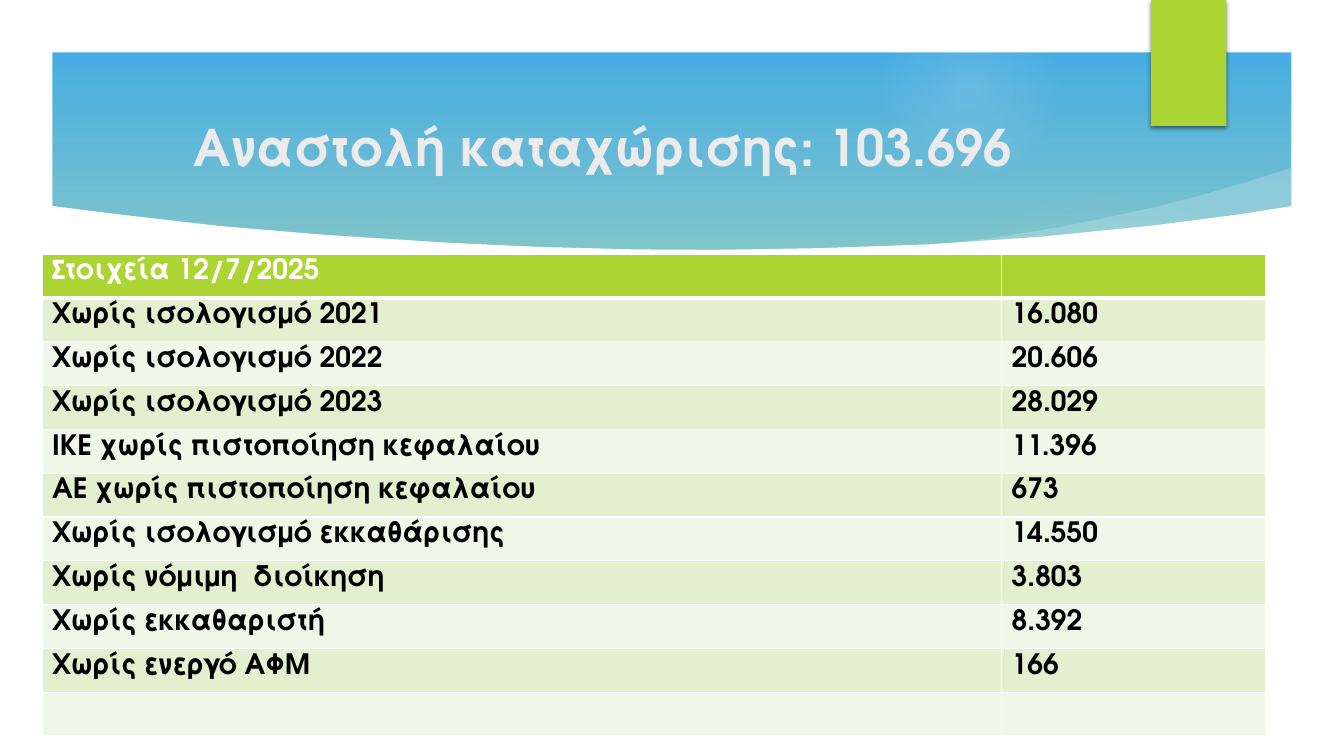
"""Build the slide on suspended registrations: a curved banner above a two-column table."""
import pptx
import pptx.dml.color
import pptx.enum.shapes
import pptx.enum.text
import pptx.oxml
import pptx.oxml.ns
import pptx.util

UNIT = pptx.util.Inches(1 / 12)
COLUMNS, ROWS = 160, 90
FONT = "TeX Gyre Adventor"
COLORS = {
    "sky": "38A6E9", "lime": "DAECA3", "pale": "E6F2C2", "glow": "F7F7F7",
    "white": "FFFFFF", "ribbon": "ACD433", "title": "EBEBEB", "black": "000000",
    "odd": "E3EFCE", "even": "F1F7E8",
}
BACKGROUND_STOPS = [(0, "sky", 100), (74, "lime", 100), (83, "lime", 100), (100, "pale", 100)]
LINEAR = '<a:lin ang="5400000" scaled="0"/>'
RADIAL = '<a:path path="circle"><a:fillToRect l="50000" t="50000" r="50000" b="50000"/></a:path>'
GLOWS = [
    ((113, 22, 37, 37), [(0, "glow", 7), (36, "glow", 6), (69, "glow", 0)]),
    ((105, 0, 21, 21), [(0, "glow", 14), (36, "glow", 7), (73, "glow", 0)]),
]
SWOOSH = [
    (154, 19.9), (148.3, 21.7), (142.8, 23.3), (137.3, 24.7), (131.8, 25.9), (126.4, 27),
    (121.2, 27.85), (116.3, 28.55), (111.6, 29.15), (112, 30), (121, 29.7), (154.7, 25.7),
]
PAGE = [
    (6, 84), (6, 24.5), (13.5, 25.45), (26, 26.9), (38.5, 27.95), (53.3, 28.9),
    (64.2, 29.4), (75.8, 29.7), (85, 29.75), (97.6, 29.55), (110.5, 29.1),
    (123.8, 28.2), (137.3, 26.85), (147.4, 25.55), (154, 24.5), (154, 84),
]
OUTER_EDGE = [(0, 0), (0, ROWS), (COLUMNS, ROWS), (COLUMNS, 0)]
INNER_EDGE = [(153.75, 83.75), (6.25, 83.75), (6.25, 6.25), (153.75, 6.25)]
COLUMN_WIDTHS = (114.25, 31.45)
ROW_HEIGHT = 5.22
ENTRIES = [
    ("Στοιχεία 12/7/2025", ""),
    ("Χωρίς ισολογισμό 2021", "16.080"),
    ("Χωρίς ισολογισμό 2022", "20.606"),
    ("Χωρίς ισολογισμό 2023", "28.029"),
    ("ΙΚΕ χωρίς πιστοποίηση κεφαλαίου", "11.396"),
    ("ΑΕ χωρίς πιστοποίηση κεφαλαίου", "673"),
    ("Χωρίς ισολογισμό εκκαθάρισης", "14.550"),
    ("Χωρίς νόμιμη  διοίκηση", "3.803"),
    ("Χωρίς εκκαθαριστή", "8.392"),
    ("Χωρίς ενεργό ΑΦΜ", "166"),
    ("", ""),
]


def grid(*lengths):
    return [round(length * UNIT) for length in lengths]


def rgb(color):
    return pptx.dml.color.RGBColor.from_string(COLORS[color])


def xml(tag, attributes, content):
    namespace = pptx.oxml.ns.nsdecls("a")
    return pptx.oxml.parse_xml(f"<a:{tag} {namespace} {attributes}>{content}</a:{tag}>")


def color_xml(color, opacity=100):
    return f'<a:srgbClr val="{COLORS[color]}"><a:alpha val="{opacity * 1000}"/></a:srgbClr>'


def set_gradient(fill, owner, stops, direction):
    fill.gradient()
    plain = owner.find(".//" + pptx.oxml.ns.qn("a:gradFill"))
    marks = "".join(
        f'<a:gs pos="{position * 1000}">{color_xml(color, opacity)}</a:gs>'
        for position, color, opacity in stops
    )
    content = f"<a:gsLst>{marks}</a:gsLst>{direction}"
    plain.getparent().replace(plain, xml("gradFill", 'rotWithShape="1"', content))


def set_solid(shape, color, opacity=100):
    shape.shadow.inherit = False
    shape.line.fill.background()
    shape.fill.solid()
    shape.fill.fore_color.rgb = rgb(color)
    if opacity < 100:
        tint = shape._element.spPr.find(".//" + pptx.oxml.ns.qn("a:srgbClr"))
        tint.append(xml("alpha", f'val="{opacity * 1000}"', ""))


def add_glow(slide, box, stops):
    glow = slide.shapes.add_shape(pptx.enum.shapes.MSO_SHAPE.OVAL, *grid(*box))
    glow.shadow.inherit = False
    glow.line.fill.background()
    set_gradient(glow.fill, glow._element.spPr, stops, RADIAL)


def add_outline(slide, contours, opacity=100):
    builder = slide.shapes.build_freeform(*grid(*contours[0][0]))
    for contour in contours:
        first, *others = [grid(*point) for point in contour]
        if contour is not contours[0]:
            builder.move_to(*first)
        builder.add_line_segments(others, close=True)
    set_solid(builder.convert_to_shape(), "white", opacity)


def add_ribbon(slide):
    ribbon = slide.shapes.add_shape(
        pptx.enum.shapes.MSO_SHAPE.RECTANGLE, *grid(137, 0, 9, 15))
    set_solid(ribbon, "ribbon")
    effects = ribbon._element.spPr.find(pptx.oxml.ns.qn("a:effectLst"))
    effects.append(xml(
        "outerShdw", 'blurRad="38100" dist="25400" dir="5400000" rotWithShape="0"',
        color_xml("black", 45)))


def format_text(paragraph, size, color):
    for run in paragraph.runs:
        run.font.name = FONT
        run.font.size = pptx.util.Pt(size)
        run.font.bold = True
        run.font.color.rgb = rgb(color)


def add_title(slide, text):
    frame = slide.shapes.add_textbox(*grid(15.1, 12.75, 115, 9.25)).text_frame
    frame.word_wrap = True
    frame.vertical_anchor = pptx.enum.text.MSO_ANCHOR.MIDDLE
    frame.text = text
    heading = frame.paragraphs[0]
    heading.alignment = pptx.enum.text.PP_ALIGN.CENTER
    format_text(heading, 36, "title")


def style_cell(cell, row):
    thick_side = {0: "lnB", 1: "lnT"}.get(row)
    properties = cell._tc.get_or_add_tcPr()
    for side in ("lnL", "lnR", "lnT", "lnB"):
        width = pptx.util.Pt(3 if side == thick_side else 1)
        properties.append(xml(
            side, f'w="{width}"', f"<a:solidFill>{color_xml('white')}</a:solidFill>"))
    cell.fill.solid()
    cell.fill.fore_color.rgb = rgb("ribbon" if row == 0 else "odd" if row % 2 else "even")


def add_entries(slide):
    table = slide.shapes.add_table(
        len(ENTRIES), len(COLUMN_WIDTHS),
        *grid(5, 30.25, sum(COLUMN_WIDTHS), ROW_HEIGHT * len(ENTRIES))).table
    for column, width in zip(table.columns, grid(*COLUMN_WIDTHS)):
        column.width = width
    for row, entry in enumerate(ENTRIES):
        table.rows[row].height = grid(ROW_HEIGHT)[0]
        for column, text in enumerate(entry):
            cell = table.cell(row, column)
            style_cell(cell, row)
            if text:
                cell.text_frame.text = text
                format_text(cell.text_frame.paragraphs[0], 20, "black" if row else "white")


def main():
    deck = pptx.Presentation()
    deck.slide_width, deck.slide_height = grid(COLUMNS, ROWS)
    slide = deck.slides.add_slide(deck.slide_layouts[6])
    set_gradient(slide.background.fill, slide._element, BACKGROUND_STOPS, LINEAR)
    for box, stops in GLOWS:
        add_glow(slide, box, stops)
    add_outline(slide, [SWOOSH], opacity=20)
    add_outline(slide, [PAGE])
    add_outline(slide, [OUTER_EDGE, INNER_EDGE])
    add_ribbon(slide)
    add_title(slide, "Αναστολή καταχώρισης: 103.696 ")
    add_entries(slide)
    deck.save("out.pptx")


if __name__ == "__main__":
    main()
